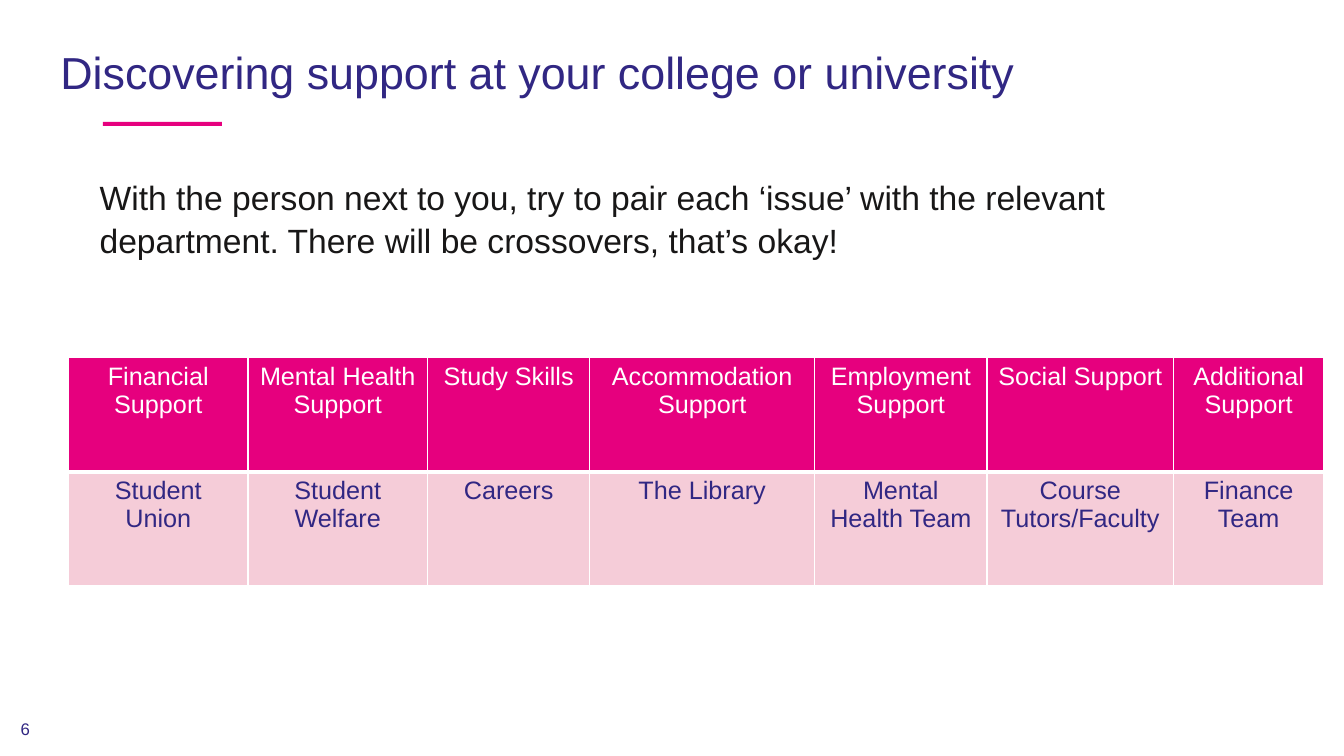
import pptx
import pptx.dml.color
import pptx.enum.shapes
import pptx.enum.text
import pptx.oxml
import pptx.oxml.ns
import pptx.util

RGBColor = pptx.dml.color.RGBColor
ALIGN = pptx.enum.text.PP_ALIGN
ANCHOR = pptx.enum.text.MSO_ANCHOR

PINK = RGBColor(0xE6, 0x00, 0x7E)
PALE_PINK = RGBColor(0xF5, 0xCC, 0xD8)
INDIGO = RGBColor(0x31, 0x27, 0x83)
BLACK = RGBColor(0x18, 0x17, 0x17)
WHITE = RGBColor(0xFF, 0xFF, 0xFF)

EMU_PER_PX = 9144  # 100 px to the inch
SUPPORT_TYPES = ["Financial Support", "Mental Health Support", "Study Skills",
                 "Accommodation Support", "Employment Support",
                 "Social Support", "Additional Support"]
DEPARTMENTS = ["Student Union", "Student Welfare", "Careers", "The Library",
               "Mental Health Team", "Course Tutors/Faculty", "Finance Team"]
COLUMN_WIDTHS = [178, 178, 161, 223, 171, 185, 149]
ROW_HEIGHT = 113


def px(length):
    return pptx.util.Emu(length * EMU_PER_PX)


def write_text(frame, text, *, font, size, color, align=ALIGN.LEFT, spacing=1.0):
    para = frame.paragraphs[0]
    para.alignment = align
    para.line_spacing = spacing
    span = para.add_run()
    span.text = text
    span.font.name = font
    span.font.size = pptx.util.Pt(size)
    span.font.bold = False
    span.font.color.rgb = color


class SlideBuilder:
    def __init__(self, page, font):
        self.page = page
        self.font = font

    def bar(self, left, top, width, height, color):
        shape = self.page.shapes.add_shape(
            pptx.enum.shapes.MSO_SHAPE.RECTANGLE,
            px(left), px(top), px(width), px(height))
        shape.shadow.inherit = False
        shape.fill.solid()
        shape.fill.fore_color.rgb = color
        shape.line.fill.background()

    def text(self, left, top, width, height, text, anchor=ANCHOR.TOP, **text_format):
        box = self.page.shapes.add_textbox(px(left), px(top), px(width), px(height))
        frame = box.text_frame
        frame.word_wrap = True
        frame.vertical_anchor = anchor
        write_text(frame, text, font=self.font, **text_format)

    def borders(self, cell, color, **widths):
        properties = cell._tc.get_or_add_tcPr()
        for side in "LRTB":
            width = pptx.util.Pt(widths.get(side, 1))
            properties.append(pptx.oxml.parse_xml(
                f'<a:ln{side} {pptx.oxml.ns.nsdecls("a")} w="{width}">'
                f'<a:solidFill><a:srgbClr val="{color}"/></a:solidFill></a:ln{side}>'))

    def table(self, left, top, widths, row_height, rows):
        """Each row is (labels, fill, text color, border widths by side)."""
        table = self.page.shapes.add_table(
            len(rows), len(widths), px(left), px(top),
            px(sum(widths)), px(row_height * len(rows))).table
        table.horz_banding = False
        for column, width in zip(table.columns, widths):
            column.width = px(width)
        for row, (labels, fill, color, border_widths) in zip(table.rows, rows):
            row.height = px(row_height)
            for cell, label in zip(row.cells, labels):
                self.borders(cell, WHITE, **border_widths)
                cell.fill.solid()
                cell.fill.fore_color.rgb = fill
                write_text(cell.text_frame, label, font=self.font, size=18,
                           color=color, align=ALIGN.CENTER)


def main():
    deck = pptx.Presentation()
    deck.slide_width = px(1333)
    deck.slide_height = px(750)
    page = deck.slides.add_slide(deck.slide_layouts[6])
    builder = SlideBuilder(page, "Arial")

    # Title with its accent bar
    builder.bar(102, 121, 118, 4, PINK)
    builder.text(50, 32, 1156, 71, "Discovering support at your college or university",
                 anchor=ANCHOR.BOTTOM, size=32, color=INDIGO, spacing=0.9)

    # Slide number
    builder.text(0, 706, 50, 35, "6", anchor=ANCHOR.MIDDLE,
                 size=12, color=INDIGO, align=ALIGN.CENTER)

    # Task instructions
    builder.text(89, 168, 1156, 531,
                 "With the person next to you, try to pair each ‘issue’ with the "
                 "relevant department. There will be crossovers, that’s okay!",
                 size=24, color=BLACK, spacing=1.07)

    # Issues above departments
    builder.table(68, 355, COLUMN_WIDTHS, ROW_HEIGHT, [
        (SUPPORT_TYPES, PINK, WHITE, {"B": 3}),
        (DEPARTMENTS, PALE_PINK, INDIGO, {"T": 3}),
    ])

    deck.save("out.pptx")


if __name__ == "__main__":
    main()
